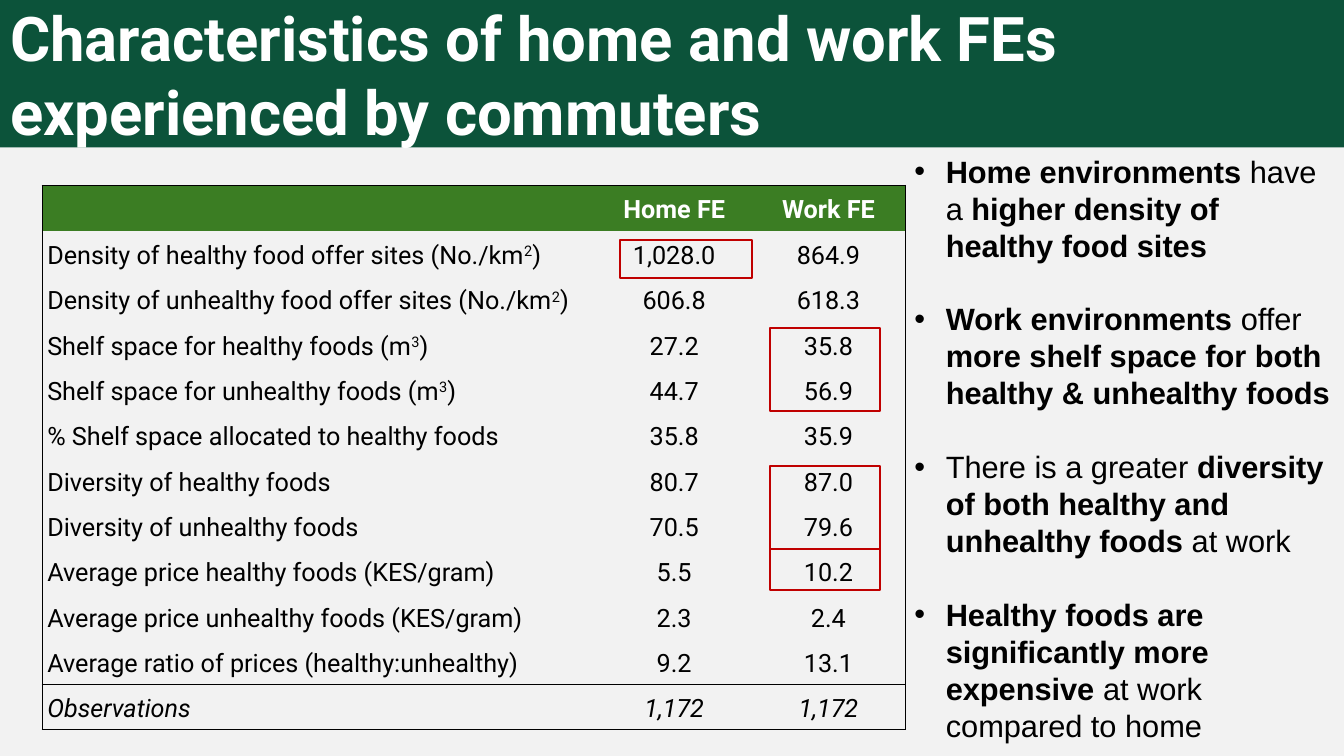
from lxml.etree import SubElement
from pptx import Presentation
from pptx.dml.color import RGBColor
from pptx.enum.shapes import MSO_SHAPE
from pptx.enum.text import MSO_ANCHOR, MSO_AUTO_SIZE, PP_ALIGN
from pptx.oxml.ns import qn
from pptx.util import Pt

NO_STYLE_TABLE = "{2D5ABB26-0587-4C30-8999-92F81FD0307C}"
WIDTH, HEIGHT = 960, 540
BANNER_HEIGHT = 105.3


def colour(hex_string):
    return RGBColor.from_string(hex_string)


def add_text(paragraph, text, font="Roboto", size=18, color="000000",
             bold=False, italic=False, baseline=0):
    run = paragraph.add_run()
    run.text = text
    run.font.name = font
    run.font.size = Pt(size)
    run.font.color.rgb = colour(color)
    run.font.bold = bold
    run.font.italic = italic
    if baseline:
        run.font._element.set("baseline", str(baseline * 1000))


class SlideBuilder:
    banner_green = "0C533A"
    header_green = "3B7D23"
    highlight_red = "C00000"
    white = "FFFFFF"
    black = "000000"

    def __init__(self, slide):
        self.slide = slide
        slide.background.fill.solid()
        slide.background.fill.fore_color.rgb = colour("F2F2F2")

    def title(self, text):
        shape = self.slide.shapes.title
        shape.left, shape.top = Pt(0), Pt(0)
        shape.width, shape.height = Pt(WIDTH), Pt(BANNER_HEIGHT)
        shape.fill.solid()
        shape.fill.fore_color.rgb = colour(self.banner_green)
        frame = shape.text_frame
        frame.auto_size = MSO_AUTO_SIZE.NONE
        frame.vertical_anchor = MSO_ANCHOR.MIDDLE
        paragraph = frame.paragraphs[0]
        paragraph.alignment = PP_ALIGN.LEFT
        add_text(paragraph, text, size=44, color=self.white, bold=True)

    def cell_border(self, cell, sides):
        properties = cell._tc.get_or_add_tcPr()
        for side in "LRTB":
            if side in sides:
                line = SubElement(properties, qn(f"a:ln{side}"), w=str(Pt(1)))
                fill = SubElement(line, qn("a:solidFill"))
                SubElement(fill, qn("a:srgbClr"), val=self.black)

    def table(self, rows, left, top, column_widths, row_height):
        last = len(rows) - 1
        frame = self.slide.shapes.add_table(
            len(rows), len(column_widths), Pt(left), Pt(top),
            Pt(sum(column_widths)), Pt(row_height * len(rows)))
        table = frame.table
        table.horz_banding = False
        table._tbl.tblPr.find(qn("a:tableStyleId")).text = NO_STYLE_TABLE
        for column, width in zip(table.columns, column_widths):
            column.width = Pt(width)
        for row_index, values in enumerate(rows):
            table.rows[row_index].height = Pt(row_height)
            header, footer = row_index == 0, row_index == last
            for column_index, value in enumerate(values):
                cell = table.cell(row_index, column_index)
                cell.margin_left = cell.margin_right = Pt(3.6)
                cell.margin_top = cell.margin_bottom = Pt(0)
                cell.vertical_anchor = MSO_ANCHOR.MIDDLE
                sides = {0: "L", len(values) - 1: "R"}.get(column_index, "")
                sides += "T" if header or footer else ""
                sides += "B" if row_index >= last - 1 else ""
                self.cell_border(cell, sides)
                if header:
                    cell.fill.solid()
                    cell.fill.fore_color.rgb = colour(self.header_green)
                else:
                    cell.fill.background()
                paragraph = cell.text_frame.paragraphs[0]
                paragraph.line_spacing = 1.15
                paragraph.alignment = PP_ALIGN.CENTER if column_index else PP_ALIGN.LEFT
                # Odd parts between ^ marks are superscripts
                for index, part in enumerate(value.split("^")):
                    if part:
                        add_text(paragraph, part, bold=header, italic=footer,
                                 color=self.white if header else self.black,
                                 baseline=30 * (index % 2))

    def bullets(self, items, left, top, width, height, size, gap):
        box = self.slide.shapes.add_textbox(Pt(left), Pt(top), Pt(width), Pt(height))
        frame = box.text_frame
        frame.word_wrap = True
        for index, item in enumerate(items):
            paragraph = frame.add_paragraph() if index else frame.paragraphs[0]
            properties = paragraph._p.get_or_add_pPr()
            properties.set("marL", str(Pt(22.5)))
            properties.set("indent", str(-Pt(22.5)))
            SubElement(properties, qn("a:buFont"), typeface="Arial")
            SubElement(properties, qn("a:buChar"), char="•")
            if index:
                paragraph.space_before = Pt(gap)
            # Odd parts between * marks are bold
            for part_index, part in enumerate(item.split("*")):
                if part:
                    add_text(paragraph, part, font="Arial", size=size,
                             bold=part_index % 2 == 1)

    def highlight(self, left, top, width, height):
        shape = self.slide.shapes.add_shape(
            MSO_SHAPE.RECTANGLE, Pt(left), Pt(top), Pt(width), Pt(height))
        shape.shadow.inherit = False
        shape.fill.background()
        shape.line.color.rgb = colour(self.highlight_red)
        shape.line.width = Pt(1.5)


TABLE_ROWS = [
    ("", "Home FE", "Work FE"),
    ("Density of healthy food offer sites (No./km^2^)", "1,028.0", "864.9"),
    ("Density of unhealthy food offer sites (No./km^2^)", "606.8", "618.3"),
    ("Shelf space for healthy foods (m^3^)", "27.2", "35.8"),
    ("Shelf space for unhealthy foods (m^3^)", "44.7", "56.9"),
    ("% Shelf space allocated to healthy foods", "35.8", "35.9"),
    ("Diversity of healthy foods", "80.7", "87.0"),
    ("Diversity of unhealthy foods", "70.5", "79.6"),
    ("Average price healthy foods (KES/gram)", "5.5", "10.2"),
    ("Average price unhealthy foods (KES/gram)", "2.3", "2.4"),
    ("Average ratio of prices (healthy:unhealthy)", "9.2", "13.1"),
    ("Observations", "1,172", "1,172"),
]
FINDINGS = [
    "*Home environments* have a *higher density of healthy food sites*",
    "*Work environments* offer *more shelf space for both healthy & unhealthy foods*",
    "There is a greater *diversity of both healthy and unhealthy foods* at work",
    "*Healthy foods are significantly more expensive* at work compared to home",
]


def main():
    presentation = Presentation()
    presentation.slide_width, presentation.slide_height = Pt(WIDTH), Pt(HEIGHT)
    builder = SlideBuilder(presentation.slides.add_slide(presentation.slide_layouts[5]))

    # Title banner
    builder.title("Characteristics of home and work FEs experienced by commuters")

    # Comparison table
    builder.table(TABLE_ROWS, 30.2, 132.5, [396.3, 110.2, 110.2], 32.4)

    # Key findings
    builder.bullets(FINDINGS, 646, 105.3, 314, 433.4, size=22, gap=26.4)

    # Highlighted values
    builder.highlight(443, 171.4, 94.3, 27.4)
    for top, height in [(234, 59.8), (332.6, 59.8), (392.4, 28.8)]:
        builder.highlight(550, top, 78.5, height)

    presentation.save("out.pptx")


if __name__ == "__main__":
    main()
